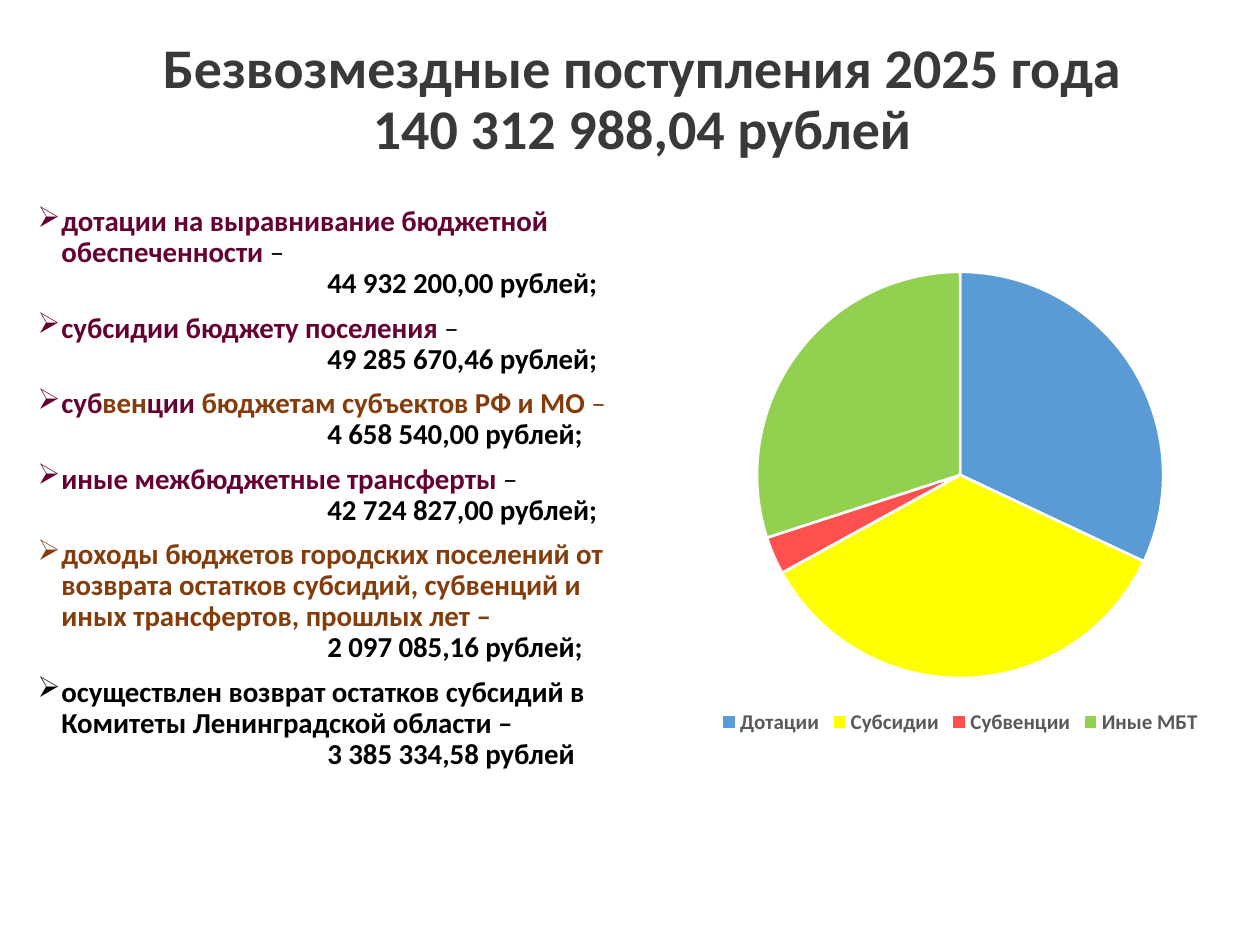
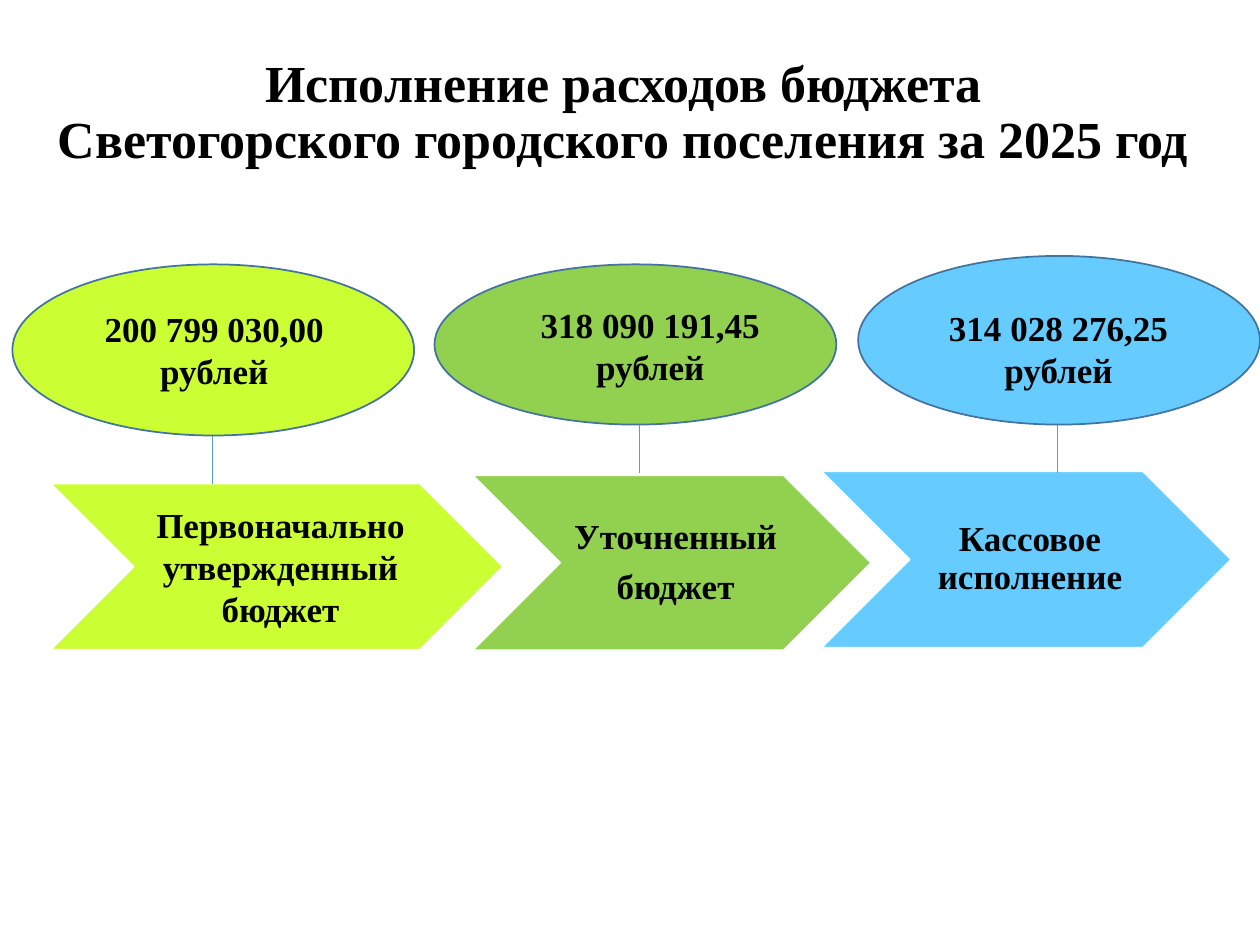
from dataclasses import dataclass

from lxml.etree import SubElement
from pptx import Presentation
from pptx.chart.data import CategoryChartData
from pptx.dml.color import RGBColor
from pptx.enum.chart import XL_CHART_TYPE, XL_LEGEND_POSITION
from pptx.enum.shapes import MSO_CONNECTOR, MSO_SHAPE
from pptx.enum.text import MSO_ANCHOR, PP_ALIGN
from pptx.oxml.ns import qn
from pptx.shapes.autoshape import Shape
from pptx.slide import Slide
from pptx.text.text import TextFrame, _Paragraph
from pptx.util import Cm, Pt


@dataclass(frozen=True)
class Theme:
    sans: str = "Calibri"
    serif: str = "Times New Roman"
    black: str = "000000"
    white: str = "FFFFFF"
    heading: str = "3B3838"
    legend: str = "595959"
    plum: str = "660033"
    brown: str = "843C0B"
    blue: str = "5B9BD5"
    yellow: str = "FFFF00"
    red: str = "FF5050"
    green: str = "92D050"
    lime: str = "CCFF33"
    sky: str = "66CCFF"
    outline: str = "43739E"
    income_title: float = 32
    spending_title: float = 29.7
    list_size: float = 16.5
    stage_size: float = 20
    legend_size: float = 12
    line_spacing: float = 0.9


THEME = Theme()


@dataclass(frozen=True)
class Box:
    """A place on the slide, in centimetres."""
    left: float
    top: float
    width: float
    height: float

    def lengths(self) -> tuple[Cm, Cm, Cm, Cm]:
        return Cm(self.left), Cm(self.top), Cm(self.width), Cm(self.height)


@dataclass(frozen=True)
class Span:
    text: str
    color: str = THEME.black
    bold: bool = True


@dataclass(frozen=True)
class Income:
    label: tuple[Span, ...]
    amount: str


@dataclass(frozen=True)
class Slice:
    name: str
    percent: int
    color: str


@dataclass(frozen=True)
class Stage:
    """A budget stage: an oval with its amount, joined to a chevron."""
    color: str
    amount: str
    lines: tuple[str, ...]
    line_spacing: float
    oval: Box
    amount_box: Box
    chevron: Box
    link_x: float


DASH = Span("–", bold=False)
INCOMES = (
    Income((Span("дотации на выравнивание бюджетной обеспеченности ", THEME.plum), DASH),
           "44 932 200,00 рублей;"),
    Income((Span("субсидии бюджету поселения ", THEME.plum), DASH),
           "49 285 670,46 рублей;"),
    Income((Span("суб", THEME.plum), Span("вен", THEME.brown), Span("ции ", THEME.plum),
            Span("бюджетам субъектов РФ и МО ", THEME.brown),
            Span("–", THEME.brown, bold=False)),
           "4 658 540,00 рублей;"),
    Income((Span("иные межбюджетные трансферты ", THEME.plum), DASH),
           "42 724 827,00 рублей;"),
    Income((Span("доходы бюджетов городских поселений от возврата остатков субсидий, "
                 "субвенций и иных трансфертов, прошлых лет –", THEME.brown),),
           "2 097 085,16 рублей;"),
    Income((Span("осуществлен возврат остатков субсидий в Комитеты "
                 "Ленинградской области –"),),
           "3 385 334,58 рублей"),
)

SLICES = (
    Slice("Дотации", 32, THEME.blue),
    Slice("Субсидии", 35, THEME.yellow),
    Slice("Субвенции", 3, THEME.red),
    Slice("Иные МБТ", 30, THEME.green),
)

OVAL_WIDTH = 8.1
AMOUNT_SIZE = (6.4, 1.96)
LINK_LENGTH = 0.97
STAGES = (
    Stage(THEME.lime, "200 799 030,00 рублей", ("Первоначально утвержденный бюджет",), 1.0,
          Box(0.25, 5.33, OVAL_WIDTH, 3.45), Box(1.12, 6.07, *AMOUNT_SIZE),
          Box(1.02, 9.75, 9.12, 3.35), 4.29),
    Stage(THEME.green, "318 090 191,45 рублей", ("Уточненный", "бюджет"), THEME.line_spacing,
          Box(8.76, 5.33, OVAL_WIDTH, 3.23), Box(9.91, 5.99, *AMOUNT_SIZE),
          Box(9.53, 9.58, 8.03, 3.53), 12.9),
    Stage(THEME.sky, "314 028 276,25 рублей", ("Кассовое исполнение",), THEME.line_spacing,
          Box(17.3, 5.16, OVAL_WIDTH, 3.4), Box(18.14, 6.05, *AMOUNT_SIZE),
          Box(16.56, 9.5, 8.26, 3.56), 21.31),
)


def rgb(color: str) -> RGBColor:
    return RGBColor.from_string(color)


def add_span(paragraph: _Paragraph, span: Span, font: str, size: float) -> None:
    run = paragraph.add_run()
    run.text = span.text
    run.font.name = font
    run.font.size = Pt(size)
    run.font.bold = span.bold
    run.font.color.rgb = rgb(span.color)


def next_paragraph(frame: TextFrame, index: int) -> _Paragraph:
    return frame.add_paragraph() if index else frame.paragraphs[0]


def add_text_frame(slide: Slide, box: Box) -> TextFrame:
    frame = slide.shapes.add_textbox(*box.lengths()).text_frame
    frame.word_wrap = True
    return frame


def add_title(slide: Slide, box: Box, lines: tuple[str, ...], font: str,
              size: float, color: str) -> None:
    frame = add_text_frame(slide, box)
    frame.vertical_anchor = MSO_ANCHOR.MIDDLE
    title = frame.paragraphs[0]
    title.alignment = PP_ALIGN.CENTER
    title.line_spacing = THEME.line_spacing
    for index, line in enumerate(lines):
        if index:
            title.add_line_break()
        add_span(title, Span(line, color), font, size)


def indent(paragraph: _Paragraph, left: float, bullet: str = "") -> None:
    """Indent by left centimetres, hanging the bullet in that space if there is one."""
    properties = paragraph._p.get_or_add_pPr()
    properties.set("marL", str(Cm(left)))
    properties.set("indent", str(-Cm(left) if bullet else 0))
    if bullet:
        SubElement(properties, qn("a:buChar")).set("char", bullet)
    else:
        SubElement(properties, qn("a:buNone"))
    paragraph.line_spacing = THEME.line_spacing


def add_income_list(slide: Slide, box: Box) -> None:
    frame = add_text_frame(slide, box)
    for index, income in enumerate(INCOMES):
        label = next_paragraph(frame, index)
        indent(label, 0.48, "➢")
        if index:
            label.space_before = Pt(7.5)
        for span in income.label:
            add_span(label, span, THEME.sans, THEME.list_size)
        amount = frame.add_paragraph()
        indent(amount, 5.84)
        add_span(amount, Span(income.amount), THEME.sans, THEME.list_size)


def add_income_pie(slide: Slide, box: Box) -> None:
    data = CategoryChartData(number_format="0")
    data.categories = [part.name for part in SLICES]
    data.add_series("Series 1", [part.percent for part in SLICES])
    chart = slide.shapes.add_chart(XL_CHART_TYPE.PIE, *box.lengths(), data).chart
    chart.has_title = False
    chart.font.name = THEME.sans
    chart.font.size = Pt(10)
    chart.font.color.rgb = rgb(THEME.black)
    chart.has_legend = True
    legend = chart.legend
    legend.position = XL_LEGEND_POSITION.BOTTOM
    legend.include_in_layout = False
    legend.font.name = THEME.sans
    legend.font.size = Pt(THEME.legend_size)
    legend.font.bold = True
    legend.font.color.rgb = rgb(THEME.legend)
    plot = chart.plots[0]
    plot.vary_by_categories = True
    for index, part in enumerate(SLICES):
        style = plot.series[0].points[index].format
        style.fill.solid()
        style.fill.fore_color.rgb = rgb(part.color)
        style.line.color.rgb = rgb(THEME.white)
        style.line.width = Pt(1.5)


def add_figure(slide: Slide, kind: MSO_SHAPE, box: Box, fill: str, line: str) -> Shape:
    figure = slide.shapes.add_shape(kind, *box.lengths())
    figure.shadow.inherit = False
    figure.fill.solid()
    figure.fill.fore_color.rgb = rgb(fill)
    figure.line.color.rgb = rgb(line)
    figure.line.width = Pt(1)
    return figure


def add_stage_name(frame: TextFrame, stage: Stage) -> None:
    frame.word_wrap = True
    frame.vertical_anchor = MSO_ANCHOR.MIDDLE
    frame.margin_left = Cm(0.23)
    frame.margin_right = frame.margin_top = frame.margin_bottom = Cm(0.08)
    for index, line in enumerate(stage.lines):
        paragraph = next_paragraph(frame, index)
        paragraph.alignment = PP_ALIGN.CENTER
        paragraph.line_spacing = stage.line_spacing
        paragraph.space_after = Pt(7)
        add_span(paragraph, Span(line), THEME.serif, THEME.stage_size)


def add_stage(slide: Slide, stage: Stage) -> None:
    chevron = add_figure(slide, MSO_SHAPE.CHEVRON, stage.chevron, stage.color, THEME.white)
    add_stage_name(chevron.text_frame, stage)
    add_figure(slide, MSO_SHAPE.OVAL, stage.oval, stage.color, THEME.outline)
    amount = add_text_frame(slide, stage.amount_box).paragraphs[0]
    amount.alignment = PP_ALIGN.CENTER
    add_span(amount, Span(stage.amount), THEME.serif, THEME.stage_size)

    oval_bottom = stage.oval.top + stage.oval.height
    link = slide.shapes.add_connector(
        MSO_CONNECTOR.STRAIGHT, Cm(stage.link_x), Cm(oval_bottom),
        Cm(stage.link_x), Cm(oval_bottom + LINK_LENGTH))
    link.line.color.rgb = rgb(THEME.blue)
    link.line.width = Pt(0.5)
    SubElement(link._element.spPr, qn("a:effectLst"))


def main() -> None:
    deck = Presentation()
    deck.slide_width, deck.slide_height = Cm(25.4), Cm(19.05)
    blank = deck.slide_layouts[6]

    income = deck.slides.add_slide(blank)
    add_title(income, Box(1.85, 0.53, 22.2, 3),
              ("Безвозмездные поступления 2025 года", "140 312 988,04 рублей"),
              THEME.sans, THEME.income_title, THEME.heading)
    add_income_list(income, Box(0.51, 4.04, 12.4, 11.84))
    add_income_pie(income, Box(13.31, 5.13, 12.09, 9.78))

    spending = deck.slides.add_slide(blank)
    add_title(spending, Box(0.58, 0.46, 24, 3.68),
              ("Исполнение расходов бюджета", "Светогорского городского поселения за 2025 год"),
              THEME.serif, THEME.spending_title, THEME.black)
    for stage in STAGES:
        add_stage(spending, stage)

    deck.save("out.pptx")


if __name__ == "__main__":
    main()
